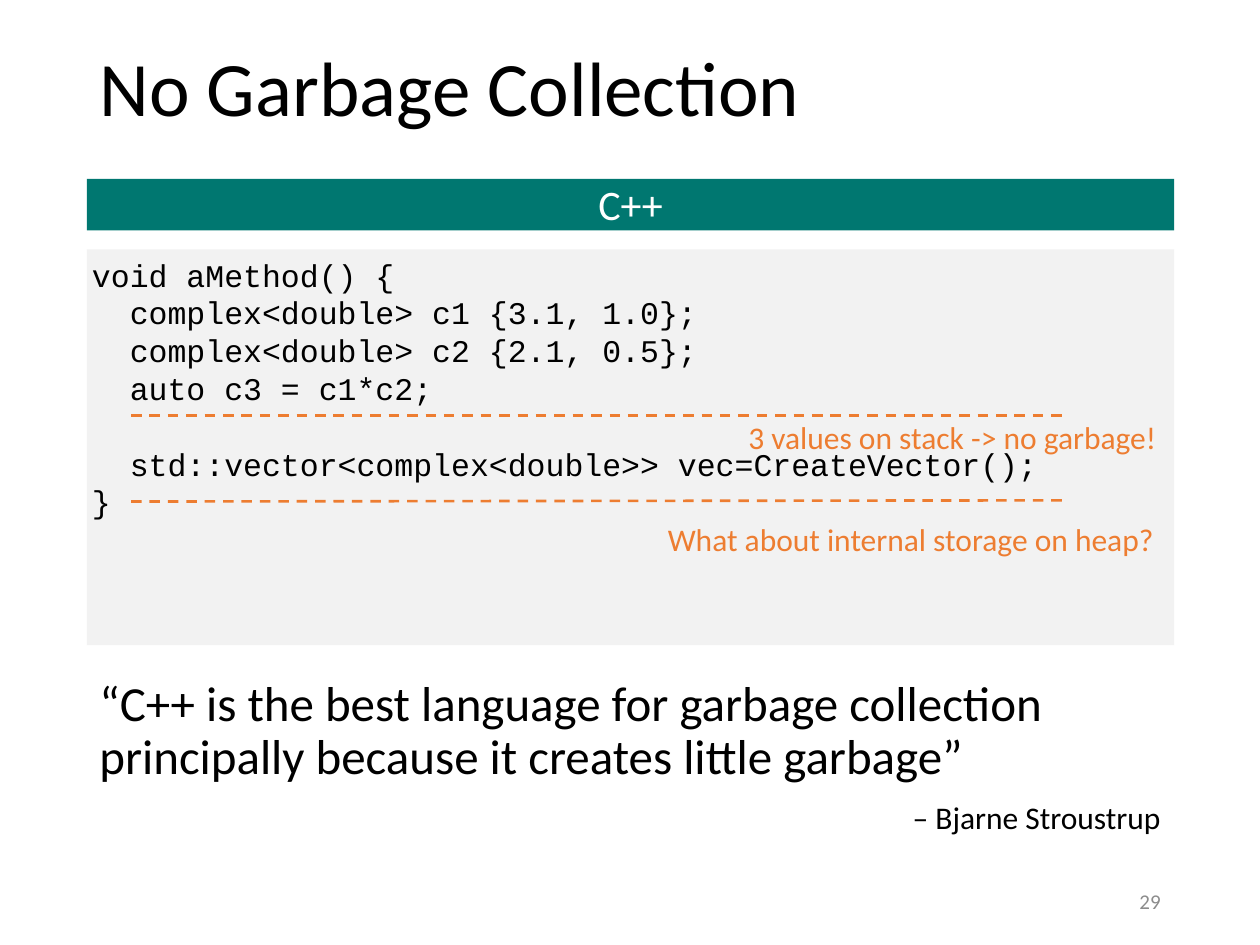
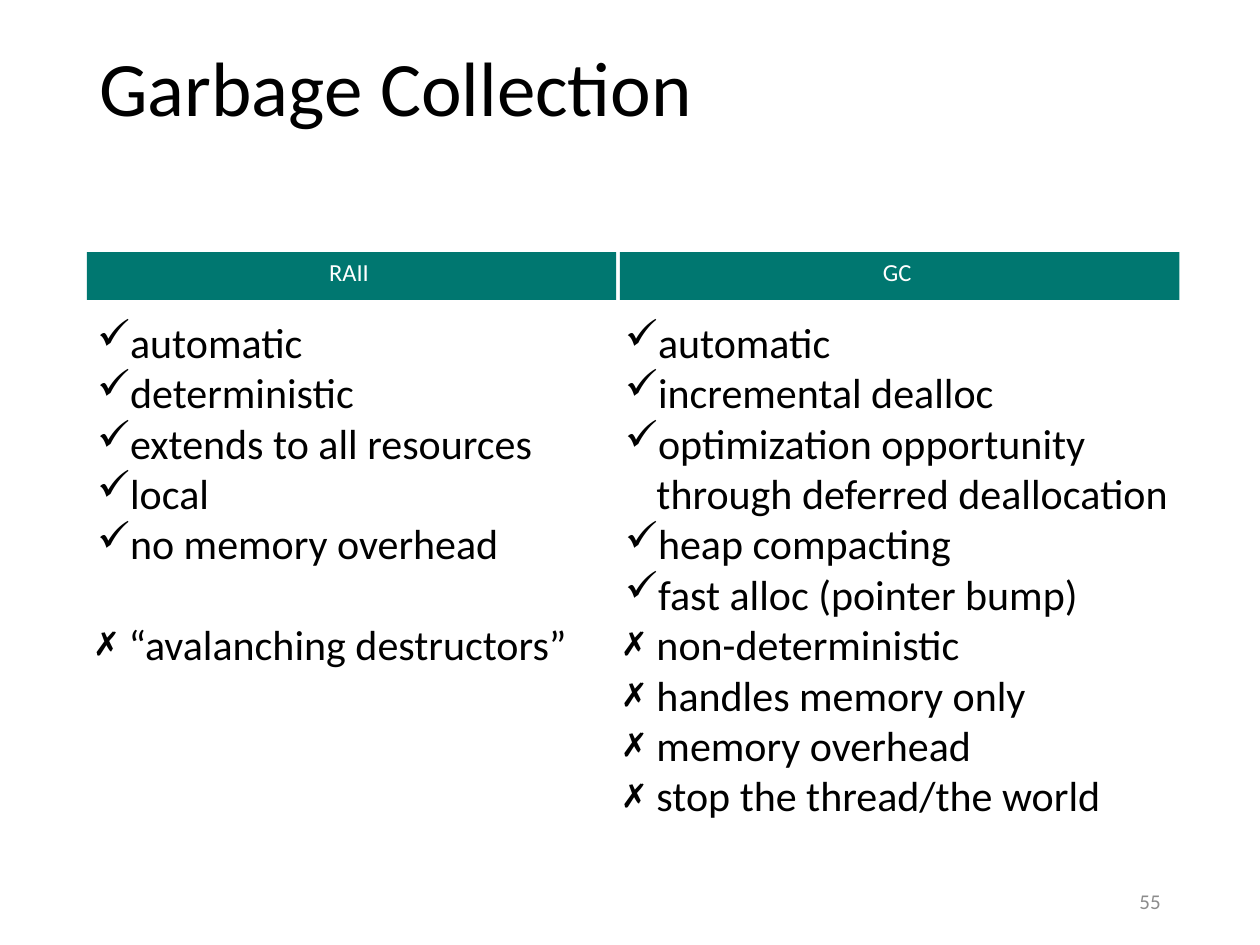
from dataclasses import dataclass
from lxml.etree import SubElement
from pptx import Presentation
from pptx.dml.color import RGBColor
from pptx.enum.dml import MSO_LINE
from pptx.enum.shapes import MSO_CONNECTOR as Wire, MSO_SHAPE as Shape
from pptx.enum.text import MSO_ANCHOR as Anchor, PP_ALIGN as Align
from pptx.oxml.ns import qn
from pptx.util import Inches, Pt

WIDE, HIGH = Inches(10), Inches(7.5)
BLACK = RGBColor(0x00, 0x00, 0x00)
WHITE = RGBColor(0xFF, 0xFF, 0xFF)
TEAL = RGBColor(0x00, 0x77, 0x70)
PALE = RGBColor(0xF2, 0xF2, 0xF2)
ORANGE = RGBColor(0xED, 0x7D, 0x31)
GREY = RGBColor(0x8C, 0x8C, 0x8C)
SANS, MONO = "Calibri", "Courier New"
GOOD, BAD = "✓", "✗"
LEFT, SPAN = 6.9, 86.2
PAD = (0.1, 0.05, 0.1, 0.05)

CODE = [
    "void aMethod() {",
    "  complex<double> c1 {3.1, 1.0};",
    "  complex<double> c2 {2.1, 0.5};",
    "  auto c3 = c1*c2;",
    "  std::vector<complex<double>> vec=CreateVector();",
    "}",
]
RAII = [
    (GOOD, ["automatic", "deterministic", "extends to all resources", "local",
            "no memory overhead"]),
    (BAD, ["“avalanching destructors”"]),
]
GC = [
    (GOOD, ["automatic", "incremental dealloc",
            "optimization opportunity through deferred deallocation",
            "heap compacting", "fast alloc (pointer bump)"]),
    (BAD, ["non-deterministic", "handles memory only", "memory overhead",
           "stop the thread/the world"]),
]


@dataclass
class Box:
    """A region, measured in EMU."""
    x: int
    y: int
    w: int
    h: int

    def spot(self, x, y):
        """Return the point at the given percent shares of the box."""
        return int(self.x + self.w * x / 100), int(self.y + self.h * y / 100)

    def inner(self, x, y, w, h):
        """Return a region given in percent shares of the box."""
        return Box(*self.spot(x, y), int(self.w * w / 100), int(self.h * h / 100))

    def edges(self):
        """Return left, top, width and height."""
        return self.x, self.y, self.w, self.h


PAGE = Box(0, 0, WIDE, HIGH)


def set_frame(shape, pad=PAD, anchor=Anchor.TOP):
    """Set wrapping, insets and anchor, and return the text frame."""
    frame = shape.text_frame
    frame.word_wrap = True
    frame.vertical_anchor = anchor
    (frame.margin_left, frame.margin_top,
     frame.margin_right, frame.margin_bottom) = map(Inches, pad)
    return frame


def add_frame(slide, box, pad=PAD, anchor=Anchor.TOP):
    """Add a text box and return its frame."""
    return set_frame(slide.shapes.add_textbox(*box.edges()), pad, anchor)


def add_block(slide, box, fill, pad):
    """Add a plain filled rectangle and return its frame."""
    block = slide.shapes.add_shape(Shape.RECTANGLE, *box.edges())
    block.shadow.inherit = False
    block.fill.solid()
    block.fill.fore_color.rgb = fill
    block.line.fill.background()
    return set_frame(block, pad)


def add_line(frame, text, size, color=BLACK, font=SANS, align=Align.LEFT):
    """Add one paragraph with one run, using the empty first one if unused."""
    first = frame.paragraphs[0]
    para = frame.add_paragraph() if first.runs else first
    para.alignment = align
    run = para.add_run()
    run.text = text
    run.font.size, run.font.name = Pt(size), font
    run.font.color.rgb = color
    return para


def add_mark(para, mark):
    """Give a paragraph a hanging bullet."""
    props = para._p.get_or_add_pPr()
    props.set("marL", str(Inches(0.25)))
    props.set("indent", str(Inches(-0.25)))
    SubElement(props, qn("a:buChar")).set("char", mark)


def add_rule(slide, start, end):
    """Add a dashed orange line."""
    rule = slide.shapes.add_connector(Wire.STRAIGHT, *start, *end)
    rule.line.color.rgb = ORANGE
    rule.line.width = Pt(1.5)
    rule.line.dash_style = MSO_LINE.DASH
    SubElement(rule._element.spPr, qn("a:effectLst"))


def add_band(slide, box, label, size, pad):
    """Add a teal heading band."""
    frame = add_block(slide, box, TEAL, pad)
    add_line(frame, label, size, WHITE, align=Align.CENTER)


def add_page(deck, title, number):
    """Add a blank slide with its title and page number."""
    slide = deck.slides.add_slide(deck.slide_layouts[6])
    frame = add_frame(slide, PAGE.inner(LEFT, 0, SPAN, 19.33), anchor=Anchor.MIDDLE)
    add_line(frame, title, 44).line_spacing = 0.9
    frame = add_frame(slide, PAGE.inner(70.6, 92.67, 22.5, 5.33), anchor=Anchor.MIDDLE)
    add_line(frame, number, 12, GREY, align=Align.RIGHT)
    return slide


def add_code(slide, box):
    """Place the code panel with its dashed rules and remarks."""
    frame = add_block(slide, box, PALE, (0.04, 0.05, 0, 0.05))
    for text in CODE:
        para = add_line(frame, text, 18, font=MONO)
        if "vec=" in text:
            para.space_before = Pt(21.6)
    notes = [
        ("3 values on stack -> no garbage!", 59.68, 41.08, 0.1, 42.04, 42.04),
        ("What about internal storage on heap?", 48.32, 66.88, 0.44, 63.7, 63.4),
    ]
    for text, x, y, inset, start, end in notes:
        note = add_frame(slide, box.inner(x, y, 100 - x, 12.74), (inset, 0.05, 0.1, 0.05))
        add_line(note, text, 18, ORANGE)
        add_rule(slide, box.spot(4.06, start), box.spot(90.15, end))


def add_quote(slide, box):
    """Place the quotation and its speaker."""
    frame = add_frame(slide, box)
    quote = add_line(frame, "“C++ is the best language for garbage collection "
                     "principally because it creates little garbage”", 28)
    name = add_line(frame, "– Bjarne Stroustrup", 18, align=Align.RIGHT)
    name.space_before = Pt(10)
    quote.line_spacing = name.line_spacing = 0.9


def add_column(slide, box, label, groups, side, split=0):
    """Place a heading band above a list of pros and cons."""
    head = 7.74
    add_band(slide, box.inner(0, 0, 100, head), label, 14, (0, 0.04, 0.04, 0.04))
    frame = add_frame(slide, box.inner(0, head, 100, 100 - head), (side, 0.13, 0, 0))
    for mark, items in groups:
        for item in items:
            para = add_line(frame, item, 24)
            add_mark(para, mark)
            if split and mark == BAD and item == items[0]:
                para.space_before = Pt(split)


def make_code(deck):
    """Build the slide on code without garbage."""
    slide = add_page(deck, "No Garbage Collection", "29")
    add_band(slide, PAGE.inner(LEFT, 18.93, 86.3, 5.47), "C++", 24, (0, 0, 0, 0))
    add_code(slide, PAGE.inner(LEFT, 26.4, 86.3, 41.87))
    add_quote(slide, PAGE.inner(LEFT, 71.2, SPAN, 18.93))


def make_pair(deck):
    """Build the slide that compares two schemes."""
    slide = add_page(deck, "Garbage Collection", "55")
    area = PAGE.inner(LEFT, 26.67, 86.7, 65.47)
    add_column(slide, area.inner(0, 0, 48.44, 100), "RAII", RAII, 0.08, 28.8)
    add_column(slide, area.inner(48.79, 0, 51.21, 100), "GC", GC, 0.04)


def main():
    """Build and save the deck."""
    deck = Presentation()
    deck.slide_width, deck.slide_height = WIDE, HIGH
    make_code(deck)
    make_pair(deck)
    deck.save("out.pptx")


if __name__ == "__main__":
    main()
